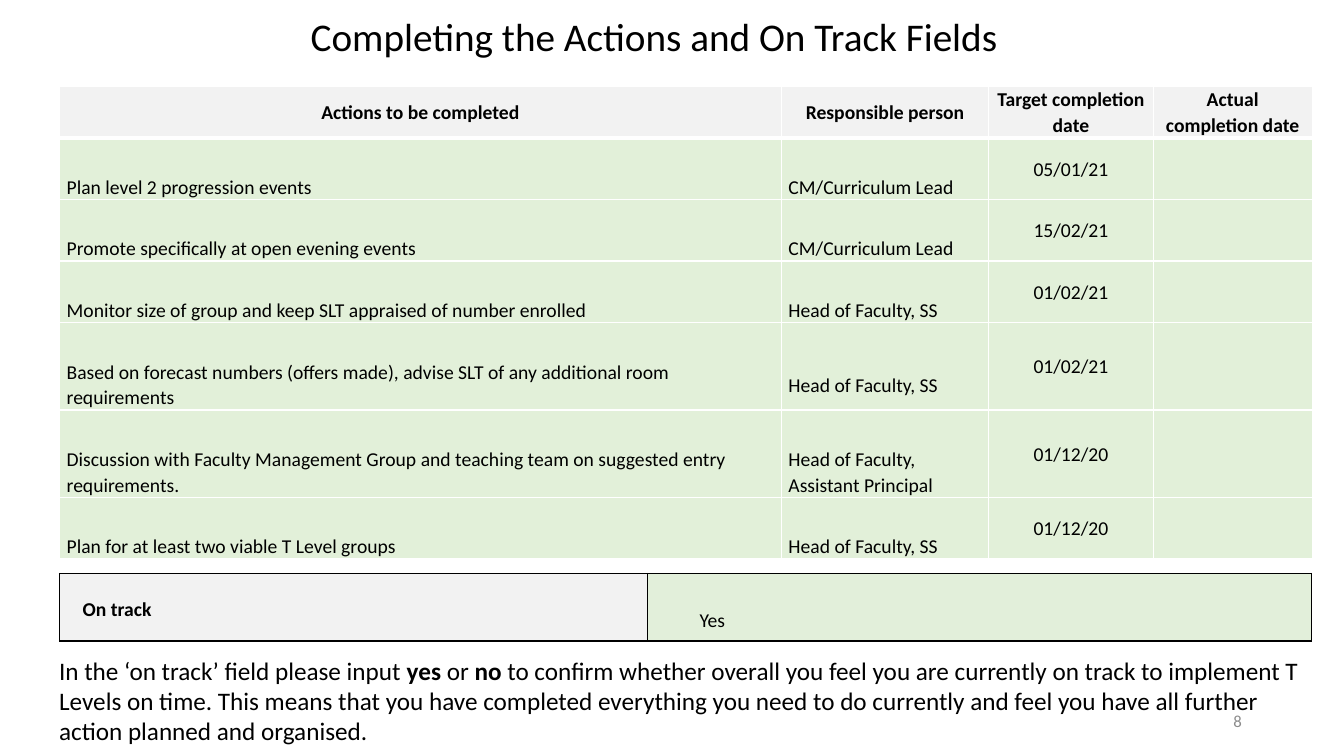
from lxml.etree import SubElement
from pptx import Presentation
from pptx.dml.color import RGBColor
from pptx.enum.text import MSO_ANCHOR, MSO_AUTO_SIZE, PP_ALIGN
from pptx.oxml.ns import qn
from pptx.util import Cm, Pt

BLACK = RGBColor(0x00, 0x00, 0x00)
WHITE = RGBColor(0xFF, 0xFF, 0xFF)
GREY = RGBColor(0x8C, 0x8C, 0x8C)
HEADER_FILL = RGBColor(0xF2, 0xF2, 0xF2)
ACTION_FILL = RGBColor(0xE2, 0xF0, 0xD9)
STATUS_FILL = RGBColor(0xE2, 0xEF, 0xDA)
FONT = "Calibri"

COLUMN_WIDTHS = [18.19, 5.23, 4.14, 4.01]
HEADER_HEIGHT = 1.29
SINGLE_LINE_HEIGHT = 1.55
DOUBLE_LINE_HEIGHT = 2.2
HEADERS = ["Actions to be completed", "Responsible person",
           "Target completion date", "Actual completion date"]
ACTIONS = [
    ("Plan level 2 progression events", "CM/Curriculum Lead", "05/01/21", SINGLE_LINE_HEIGHT),
    ("Promote specifically at open evening events", "CM/Curriculum Lead", "15/02/21",
     SINGLE_LINE_HEIGHT),
    ("Monitor size of group and keep SLT appraised of number enrolled",
     "Head of Faculty, SS", "01/02/21", SINGLE_LINE_HEIGHT),
    ("Based on forecast numbers (offers made), advise SLT of any additional room requirements",
     "Head of Faculty, SS", "01/02/21", DOUBLE_LINE_HEIGHT),
    ("Discussion with Faculty Management Group and teaching team on suggested entry requirements.",
     "Head of Faculty, Assistant Principal", "01/12/20", DOUBLE_LINE_HEIGHT),
    ("Plan for at least two viable T Level groups", "Head of Faculty, SS", "01/12/20",
     SINGLE_LINE_HEIGHT),
]
GUIDANCE = [
    ("In the ‘on track’ field please input ", False),
    ("yes", True),
    (" or ", False),
    ("no", True),
    (" to confirm whether overall you feel you are currently on track to implement T Levels "
     "on time. This means that you have completed everything you need to do currently and "
     "feel you have all further action planned and organised.", False),
]


def format_run(run, size, color=BLACK, bold=False):
    run.font.name = FONT
    run.font.size = Pt(size)
    run.font.bold = bold
    run.font.color.rgb = color


def set_borders(cell, color, bottom_width=1):
    properties = cell._tc.get_or_add_tcPr()
    widths = {"a:lnL": 1, "a:lnR": 1, "a:lnT": 1, "a:lnB": bottom_width}
    for index, (tag, width) in enumerate(widths.items()):
        line = SubElement(properties, qn(tag), w=str(Pt(width)))
        SubElement(SubElement(line, qn("a:solidFill")), qn("a:srgbClr"), val=str(color))
        properties.insert(index, line)


def fill_cell(cell, text, fill, margins, bold=False, alignment=PP_ALIGN.LEFT):
    cell.fill.solid()
    cell.fill.fore_color.rgb = fill
    cell.vertical_anchor = MSO_ANCHOR.MIDDLE
    left, top, right = margins
    cell.margin_left, cell.margin_top = Cm(left), Cm(top)
    cell.margin_right, cell.margin_bottom = Cm(right), 0
    cell.text_frame.text = text
    paragraph = cell.text_frame.paragraphs[0]
    paragraph.alignment = alignment
    paragraph.line_spacing = 1.07
    for run in paragraph.runs:
        format_run(run, 14, bold=bold)


def add_plain_table(slide, left, top, widths, heights):
    table = slide.shapes.add_table(len(heights), len(widths), Cm(left), Cm(top),
                                   Cm(sum(widths)), Cm(sum(heights))).table
    table.first_row = table.horz_banding = False
    for column, width in zip(table.columns, widths):
        column.width = Cm(width)
    for row, height in zip(table.rows, heights):
        row.height = Cm(height)
    return table


def add_title(slide, left, top, width, height):
    title = slide.shapes.title
    title.left, title.top, title.width, title.height = map(Cm, (left, top, width, height))
    title.text_frame.text = "Completing the Actions and On Track Fields"
    title.text_frame.auto_size = MSO_AUTO_SIZE.NONE
    title.text_frame.vertical_anchor = MSO_ANCHOR.TOP
    paragraph = title.text_frame.paragraphs[0]
    paragraph.alignment = PP_ALIGN.CENTER
    format_run(paragraph.runs[0], 28)


def add_actions_table(slide, left, top):
    heights = [HEADER_HEIGHT] + [action[-1] for action in ACTIONS]
    table = add_plain_table(slide, left, top, COLUMN_WIDTHS, heights)
    for column, header in enumerate(HEADERS):
        cell = table.cell(0, column)
        fill_cell(cell, header, HEADER_FILL, (0.18, 0, 0.18), True, PP_ALIGN.CENTER)
        set_borders(cell, WHITE, bottom_width=3)
    for row, (action, person, date, height) in enumerate(ACTIONS, 1):
        for column, text in enumerate((action, person, date, "")):
            cell = table.cell(row, column)
            is_date = column >= 2
            fill_cell(cell, text, ACTION_FILL, (0.18, 0 if is_date else 0.91, 0.18),
                      alignment=PP_ALIGN.CENTER if is_date else PP_ALIGN.LEFT)
            set_borders(cell, WHITE)


def add_on_track_table(slide, left, top):
    table = add_plain_table(slide, left, top, [14.81, 16.74], [1.7])
    label, status = table.cell(0, 0), table.cell(0, 1)
    fill_cell(label, "On track", HEADER_FILL, (0.58, 0.08, 0.58), bold=True)
    fill_cell(status, "Yes", STATUS_FILL, (1.32, 0.66, 0.58))
    for cell in (label, status):
        set_borders(cell, BLACK)


def add_text(slide, box, pieces, size, color=BLACK, alignment=PP_ALIGN.LEFT,
             anchor=MSO_ANCHOR.TOP):
    frame = slide.shapes.add_textbox(*map(Cm, box)).text_frame
    frame.word_wrap = True
    frame.vertical_anchor = anchor
    paragraph = frame.paragraphs[0]
    paragraph.alignment = alignment
    for text, bold in pieces:
        run = paragraph.add_run()
        run.text = text
        format_run(run, size, color, bold)


def build_actions_slide(presentation):
    slide = presentation.slides.add_slide(presentation.slide_layouts.get_by_name("Title Only"))
    add_title(slide, 6.27, 0.18, 20.42, 1.45)
    add_on_track_table(slide, 1.5, 14.45)
    add_actions_table(slide, 1.5, 2.18)
    add_text(slide, (1.24, 16.38, 31.98, 2.57), GUIDANCE, 18)
    add_text(slide, (23.93, 17.65, 7.62, 1.02), [("8", False)], 12, GREY,
             PP_ALIGN.RIGHT, MSO_ANCHOR.MIDDLE)


def main():
    presentation = Presentation()
    presentation.slide_width = Cm(33.87)
    presentation.slide_height = Cm(19.05)
    build_actions_slide(presentation)
    presentation.save("out.pptx")


if __name__ == "__main__":
    main()
